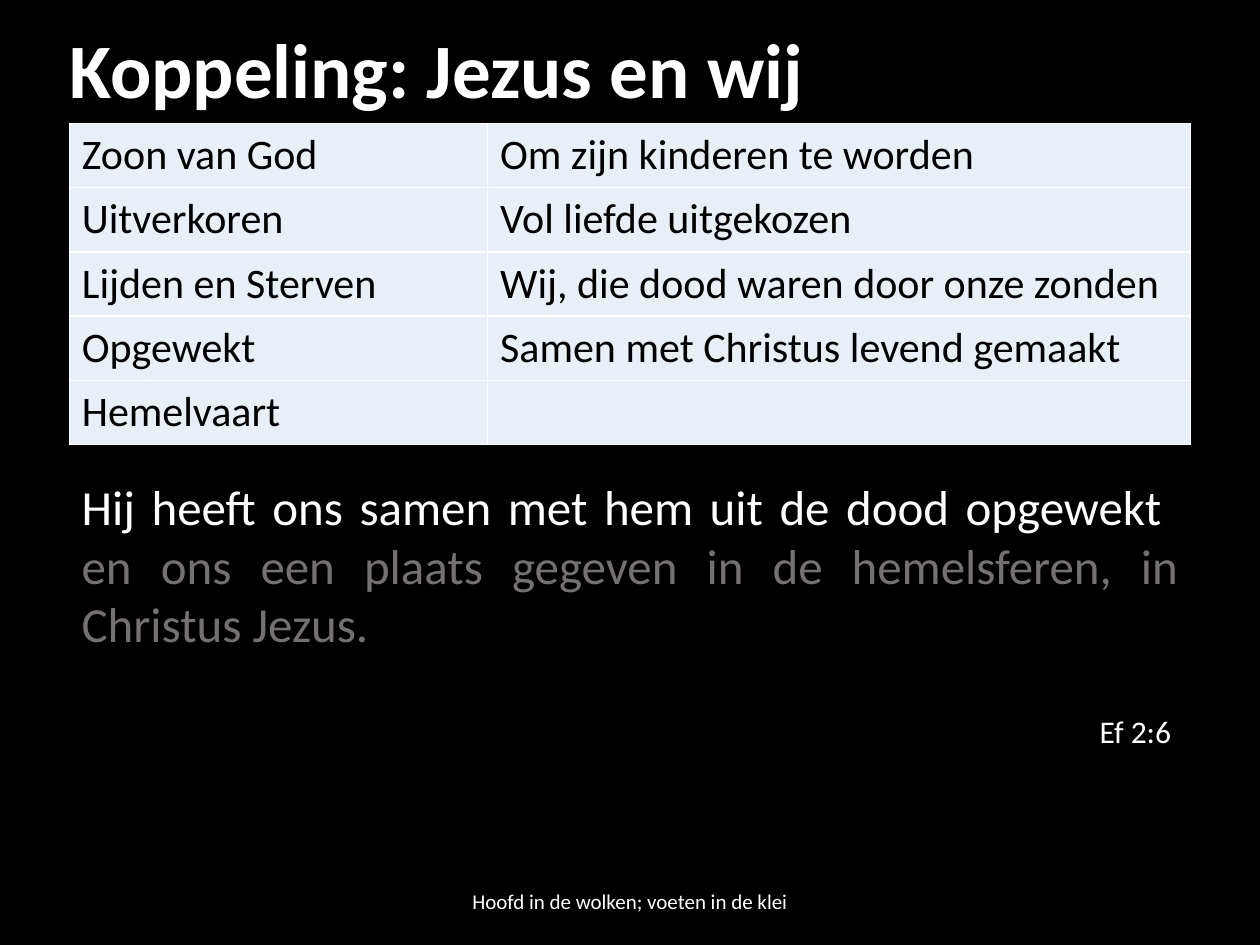
from lxml import etree
from pptx import Presentation
from pptx.dml.color import RGBColor
from pptx.enum.text import MSO_ANCHOR, PP_ALIGN
from pptx.oxml.ns import qn
from pptx.util import Inches, Pt

MIDDLE = MSO_ANCHOR.MIDDLE
CENTER, JUSTIFY, LEFT, RIGHT = PP_ALIGN.CENTER, PP_ALIGN.JUSTIFY, PP_ALIGN.LEFT, PP_ALIGN.RIGHT

GRID_COLUMNS, GRID_ROWS = 100, 75
CELL = Inches(0.1)
MARGIN, CONTENT_WIDTH = 5.5, 89
COLORS = {"background": "000000", "light": "FFFFFF", "dark": "000000",
          "muted": "767171", "cell": "E8EFF6", "border": "FFFFFF"}
COUPLINGS = [
    ("Zoon van God", "Om zijn kinderen te worden"),
    ("Uitverkoren", "Vol liefde uitgekozen"),
    ("Lijden en Sterven", "Wij, die dood waren door onze zonden"),
    ("Opgewekt", "Samen met Christus levend gemaakt"),
    ("Hemelvaart", ""),
]


def grid(*spans):
    """Turn grid spans into slide lengths."""
    return [round(span * CELL) for span in spans]


def color(name):
    """Look up a colour by its role."""
    return RGBColor.from_string(COLORS[name])


def apply(target, formats):
    """Set each format value on the target."""
    for attribute, value in formats.items():
        setattr(target, attribute, value)


def write(paragraph, words, size, ink="light", bold=False):
    """Append a formatted run to a paragraph."""
    run = paragraph.add_run()
    run.text = words
    apply(run.font, {"name": "Calibri", "size": Pt(size), "bold": bold})
    run.font.color.rgb = color(ink)


def add_title(slide, words):
    """Move the title placeholder and fill it."""
    title = slide.shapes.title
    left, top, width, height = grid(4.5, 1.9, 88.6, 7.8)
    apply(title, {"left": left, "top": top, "width": width, "height": height})
    apply(title.text_frame, {"vertical_anchor": MIDDLE, "word_wrap": True})
    heading = title.text_frame.paragraphs[0]
    apply(heading, {"alignment": LEFT, "line_spacing": 0.9})
    write(heading, words, 44, bold=True)


def add_borders(cell):
    """Draw a thin line on all four sides of a cell."""
    properties = cell._tc.get_or_add_tcPr()
    for side in ("a:lnL", "a:lnR", "a:lnT", "a:lnB"):
        line = etree.SubElement(properties, qn(side), w=str(Pt(1)))
        fill = etree.SubElement(line, qn("a:solidFill"))
        etree.SubElement(fill, qn("a:srgbClr"), val=COLORS["border"])


def add_couplings(slide, couplings, column_spans, row_span):
    """Add the table that pairs Jesus with us."""
    box = grid(MARGIN, 9.8, CONTENT_WIDTH, row_span * len(couplings))
    table = slide.shapes.add_table(len(couplings), len(column_spans), *box).table
    apply(table, {"first_row": False, "horz_banding": False})
    for column, width in zip(table.columns, grid(*column_spans)):
        column.width = width
    for row, coupling in zip(table.rows, couplings):
        for cell, words in zip(row.cells, coupling):
            add_borders(cell)
            cell.fill.solid()
            cell.fill.fore_color.rgb = color("cell")
            if words:
                write(cell.text_frame.paragraphs[0], words, 24, "dark")


def add_text_frame(slide, *box):
    """Add a wrapping text box and return its frame."""
    frame = slide.shapes.add_textbox(*grid(*box)).text_frame
    frame.word_wrap = True
    return frame


def add_verse(slide):
    """Add the Bible verse with its reference."""
    frame = add_text_frame(slide, MARGIN, 37.3, CONTENT_WIDTH, 22.9)
    verse = frame.paragraphs[0]
    verse.alignment = JUSTIFY
    write(verse, "Hij heeft ons samen met hem uit de dood opgewekt ", 28)
    verse.add_line_break()
    write(verse, "en ons een plaats gegeven in de hemelsferen, in Christus Jezus.", 28, "muted")
    reference = frame.add_paragraph()
    apply(reference, {"alignment": RIGHT, "space_before": Pt(34)})
    write(reference, "Ef 2:6 ", 18)


def add_footer(slide, words):
    """Add the centred line at the foot of the slide."""
    frame = add_text_frame(slide, 33.1, 69.5, 33.8, 4)
    frame.vertical_anchor = MIDDLE
    frame.paragraphs[0].alignment = CENTER
    write(frame.paragraphs[0], words, 12)


def main():
    """Build and save the slide."""
    presentation = Presentation()
    width, height = grid(GRID_COLUMNS, GRID_ROWS)
    apply(presentation, {"slide_width": width, "slide_height": height})
    slide = presentation.slides.add_slide(presentation.slide_layouts[5])
    slide.background.fill.solid()
    slide.background.fill.fore_color.rgb = color("background")
    add_title(slide, "Koppeling: Jezus en wij")
    add_couplings(slide, COUPLINGS, (33.2, 55.8), 5.1)
    add_footer(slide, "Hoofd in de wolken; voeten in de klei")
    add_verse(slide)
    presentation.save("out.pptx")


if __name__ == "__main__":
    main()
